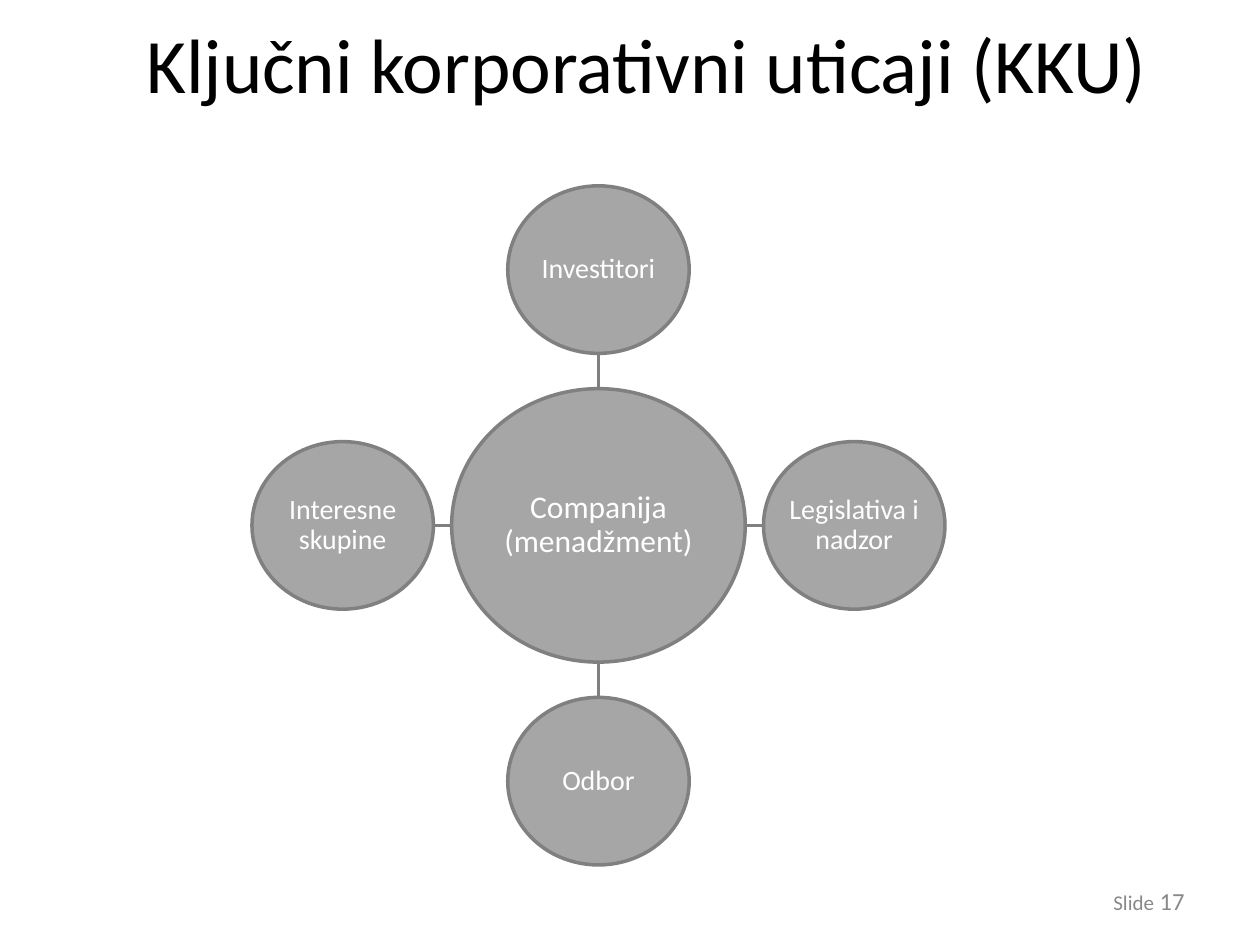
"""Build the slide on key corporate influences around the company."""
import pptx
import pptx.dml.color
import pptx.enum.shapes
import pptx.enum.text
import pptx.oxml.ns
import pptx.util
from lxml import etree

Inches = pptx.util.Inches
Pt = pptx.util.Pt
RGBColor = pptx.dml.color.RGBColor
Align = pptx.enum.text.PP_ALIGN
Anchor = pptx.enum.text.MSO_ANCHOR

BLACK = RGBColor(0x00, 0x00, 0x00)
WHITE = RGBColor(0xFF, 0xFF, 0xFF)
FILL = RGBColor(0xA6, 0xA6, 0xA6)
LINE = RGBColor(0x80, 0x80, 0x80)
FOOTER = RGBColor(0x89, 0x89, 0x89)
FONT = "Calibri"

TITLE = "Ključni korporativni uticaji (KKU)"
HUB = "Companija (menadžment)"
INFLUENCES = [
    ("Investitori", 0, -1),
    ("Legislativa i nadzor", 1, 0),
    ("Odbor", 0, 1),
    ("Interesne skupine", -1, 0),
]
FOOTER_RUNS = [("Slide", 12), (" 17", 14)]

CENTER_X, CENTER_Y = 4.75, 4.17
HUB_SIZE = (2.33, 2.17)
INFLUENCE_SIZE = (1.44, 1.33)
DISTANCE = 2.03


def add_run(paragraph, text, size, color):
    run = paragraph.add_run()
    run.text = text
    run.font.name = FONT
    run.font.size = Pt(size)
    run.font.color.rgb = color


def add_circle(slide, text, x, y, size, font_size):
    width, height = size
    shape = slide.shapes.add_shape(
        pptx.enum.shapes.MSO_SHAPE.OVAL, Inches(x - width / 2),
        Inches(y - height / 2), Inches(width), Inches(height))
    shape.shadow.inherit = False
    shape.fill.solid()
    shape.fill.fore_color.rgb = FILL
    shape.line.color.rgb = LINE
    shape.line.width = Pt(2)
    frame = shape.text_frame
    frame.word_wrap = True
    frame.vertical_anchor = Anchor.MIDDLE
    frame.margin_left = frame.margin_right = Inches(-0.03)
    frame.margin_top = frame.margin_bottom = Inches(0.01)
    paragraph = frame.paragraphs[0]
    paragraph.alignment = Align.CENTER
    paragraph.line_spacing = 0.9
    add_run(paragraph, text, font_size, WHITE)


def add_spoke(slide, step_x, step_y):
    start = [half / 2 for half in HUB_SIZE]
    end = [DISTANCE - half / 2 for half in INFLUENCE_SIZE]
    connector = slide.shapes.add_connector(
        pptx.enum.shapes.MSO_CONNECTOR.STRAIGHT,
        Inches(CENTER_X + step_x * start[0]), Inches(CENTER_Y + step_y * start[1]),
        Inches(CENTER_X + step_x * end[0]), Inches(CENTER_Y + step_y * end[1]))
    connector.line.color.rgb = LINE
    connector.line.width = Pt(2)
    etree.SubElement(connector._element.spPr, pptx.oxml.ns.qn("a:effectLst"))


def main():
    presentation = pptx.Presentation()
    presentation.slide_width, presentation.slide_height = Inches(10), Inches(7.5)
    slide = presentation.slides.add_slide(presentation.slide_layouts[5])

    title = slide.shapes.title
    title.left, title.top = Inches(0.27), Inches(0)
    title.width, title.height = Inches(9.73), Inches(0.99)
    title.text_frame.vertical_anchor = Anchor.MIDDLE
    paragraph = title.text_frame.paragraphs[0]
    paragraph.alignment = Align.CENTER
    add_run(paragraph, TITLE, 44, BLACK)

    add_circle(slide, HUB, CENTER_X, CENTER_Y, HUB_SIZE, 18)
    for text, step_x, step_y in INFLUENCES:
        add_spoke(slide, step_x, step_y)
        add_circle(slide, text, CENTER_X + step_x * DISTANCE,
                   CENTER_Y + step_y * DISTANCE, INFLUENCE_SIZE, 16)

    footer = slide.shapes.add_textbox(
        Inches(7.17), Inches(6.95), Inches(2.33), Inches(0.4)).text_frame
    footer.word_wrap = True
    footer.vertical_anchor = Anchor.MIDDLE
    footer.paragraphs[0].alignment = Align.RIGHT
    for text, size in FOOTER_RUNS:
        add_run(footer.paragraphs[0], text, size, FOOTER)

    presentation.save("out.pptx")


if __name__ == "__main__":
    main()
